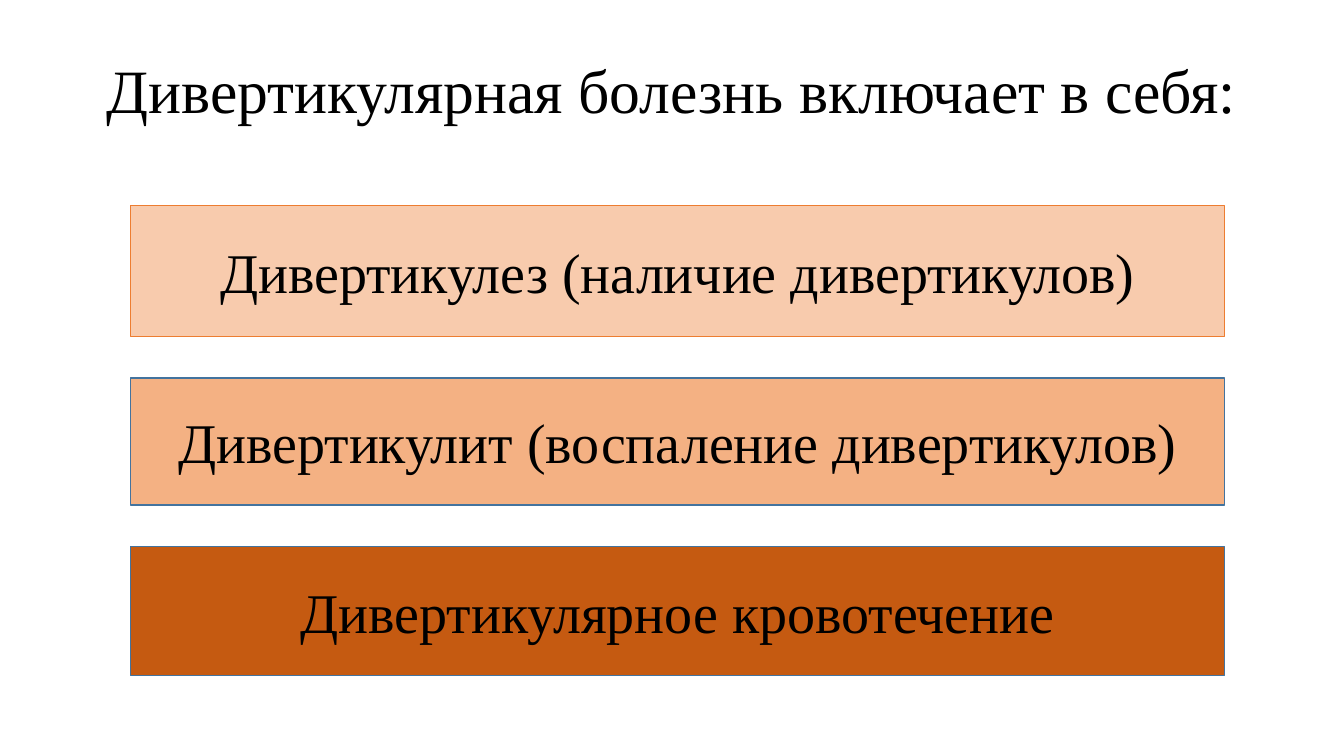
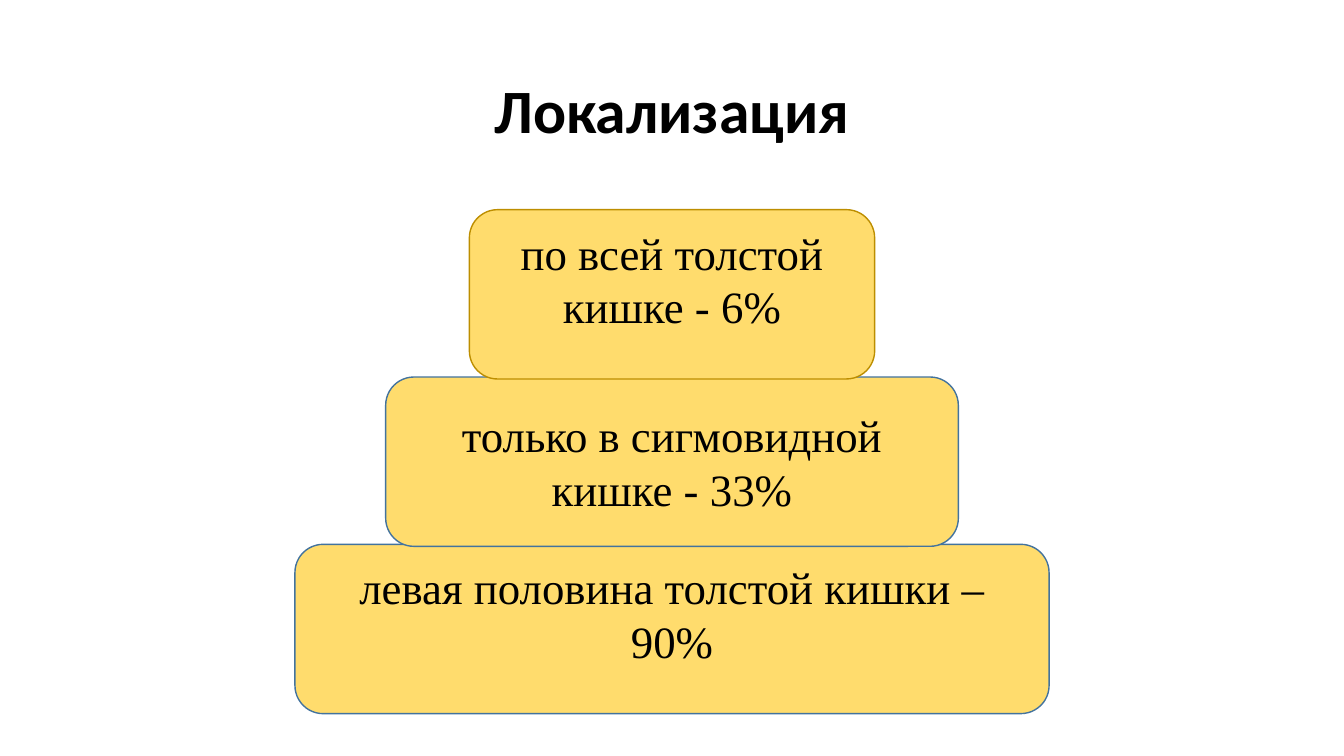
import dataclasses
import typing

import pptx
import pptx.dml.color
import pptx.enum.shapes
import pptx.enum.text
import pptx.util

SLIDE_W, SLIDE_H = 13.33, 7.5
INSET = 0.05
SERIF, SANS = "Times New Roman", "Calibri"
RECT = pptx.enum.shapes.MSO_SHAPE.RECTANGLE
ROUNDED = pptx.enum.shapes.MSO_SHAPE.ROUNDED_RECTANGLE

COLORS = {
    "text": "000000",
    "peach": "F8CBAD",
    "apricot": "F4B183",
    "rust": "C55A11",
    "yellow": "FFDC6D",
    "orange_line": "ED7D31",
    "blue_line": "43739E",
    "gold_line": "BD8E00",
}


@dataclasses.dataclass(frozen=True)
class Box:
    text: str
    width: float
    height: float
    fill: str
    line: str = "blue_line"
    line_pt: float = 1
    raise_by: float = 0


@dataclasses.dataclass(frozen=True)
class Stack:
    """Boxes placed one under another around a common vertical axis."""
    boxes: tuple[Box, ...]
    top: float
    gap: float
    center: float
    shape: pptx.enum.shapes.MSO_SHAPE
    size: float
    upper_in_front: bool = False


BAR_W, TIER_H = 10.85, 1.68

FORMS = Stack(
    boxes=(
        Box("Дивертикулез (наличие дивертикулов)", BAR_W, 1.3, "peach", "orange_line", 0.5),
        Box("Дивертикулит (воспаление дивертикулов)", BAR_W, 1.26, "apricot"),
        Box("Дивертикулярное кровотечение", BAR_W, 1.28, "rust"),
    ),
    top=2.04, gap=0.41, center=6.72, shape=RECT, size=40,
)

LOCATIONS = Stack(
    boxes=(
        Box("по всей толстой кишке - 6%", 4.02, TIER_H, "yellow", "gold_line", raise_by=0.15),
        Box("только в сигмовидной кишке - 33%", 5.68, TIER_H, "yellow"),
        Box("левая половина толстой кишки – 90%", 7.48, TIER_H, "yellow", raise_by=0.15),
    ),
    top=2.08, gap=-0.02, center=SLIDE_W / 2, shape=ROUNDED, size=32,
    upper_in_front=True,
)


def rgb(name: str) -> pptx.dml.color.RGBColor:
    return pptx.dml.color.RGBColor.from_string(COLORS[name])


def inches(*lengths: float) -> list[pptx.util.Length]:
    return [pptx.util.Inches(length) for length in lengths]


def write(sp: typing.Any, text: str, *, size: float, font: str = SERIF,
          bold: bool = False, spacing: float = 1, raise_by: float = 0) -> None:
    """Centre text in a shape; raise_by lifts it above the middle, in inches."""
    tf = sp.text_frame
    tf.word_wrap = True
    tf.vertical_anchor = pptx.enum.text.MSO_ANCHOR.MIDDLE
    tf.margin_bottom = pptx.util.Inches(INSET + 2 * raise_by)
    p = tf.paragraphs[0]
    p.alignment = pptx.enum.text.PP_ALIGN.CENTER
    p.line_spacing = spacing
    r = p.add_run()
    r.text = text
    r.font.name = font
    r.font.size = pptx.util.Pt(size)
    r.font.bold = bold
    r.font.color.rgb = rgb("text")


def add_title(slide: typing.Any, text: str, *, margin: float, top: float,
              height: float, font: str = SERIF, bold: bool = False) -> None:
    sp = slide.shapes.add_textbox(*inches(margin, top, SLIDE_W - 2 * margin, height))
    write(sp, text, size=44, font=font, bold=bold, spacing=0.9)


def add_box(slide: typing.Any, box: Box, top: float, stack: Stack) -> None:
    left = stack.center - box.width / 2
    sp = slide.shapes.add_shape(stack.shape, *inches(left, top, box.width, box.height))
    sp.shadow.inherit = False
    sp.fill.solid()
    sp.fill.fore_color.rgb = rgb(box.fill)
    sp.line.color.rgb = rgb(box.line)
    sp.line.width = pptx.util.Pt(box.line_pt)
    write(sp, box.text, size=stack.size, raise_by=box.raise_by)


def add_stack(slide: typing.Any, stack: Stack) -> None:
    placed = []
    top = stack.top
    for box in stack.boxes:
        placed.append((box, top))
        top += box.height + stack.gap
    if stack.upper_in_front:
        placed.reverse()
    for box, box_top in placed:
        add_box(slide, box, box_top, stack)


def main() -> None:
    prs = pptx.Presentation()
    prs.slide_width, prs.slide_height = inches(SLIDE_W, SLIDE_H)
    blank = prs.slide_layouts[6]

    slide = prs.slides.add_slide(blank)
    add_title(slide, "Дивертикулярная болезнь включает в себя:", margin=0, top=0, height=1.85)
    add_stack(slide, FORMS)

    slide = prs.slides.add_slide(blank)
    add_title(slide, "Локализация", margin=0.92, top=0.4, height=1.45, font=SANS, bold=True)
    add_stack(slide, LOCATIONS)

    prs.save("out.pptx")


if __name__ == "__main__":
    main()
